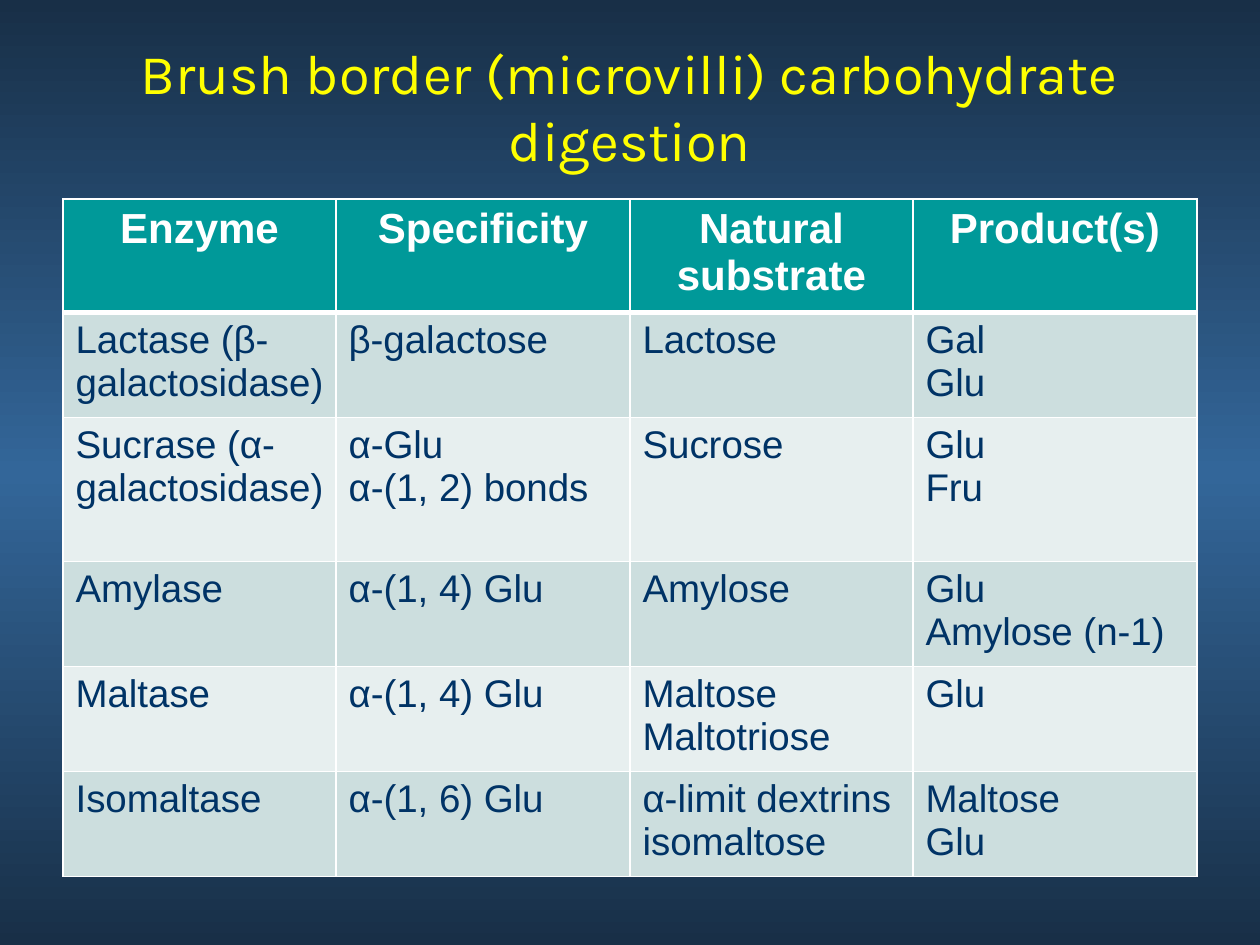
from copy import deepcopy
from dataclasses import dataclass

from lxml.etree import SubElement
from pptx import Presentation
from pptx.dml.color import RGBColor as Rgb
from pptx.enum.text import MSO_ANCHOR as Anchor, PP_ALIGN as Align
from pptx.oxml.ns import qn
from pptx.util import Pt

PX = 914400 / 126


@dataclass(frozen=True)
class Theme:
    edge: str = "182F47"
    glow: str = "336699"
    title: str = "FFFF00"
    header: str = "009999"
    bands: tuple = ("CCDEDE", "E7EFEF")
    ink: str = "003366"
    white: str = "FFFFFF"
    title_font: str = "Karla"
    body_font: str = "Arial"
    title_size: int = 32
    header_size: int = 24
    body_size: int = 22


HEADINGS = ["Enzyme", "Specificity", "Natural substrate", "Product(s)"]
ENZYMES = [
    ["Lactase (β-galactosidase)", "β-galactose", "Lactose", "Gal\nGlu"],
    ["Sucrase (α-galactosidase)", "α-Glu\nα-(1, 2) bonds", "Sucrose", "Glu\nFru"],
    ["Amylase", "α-(1, 4) Glu", "Amylose", "Glu\nAmylose (n-1)"],
    ["Maltase", "α-(1, 4) Glu", "Maltose\nMaltotriose", "Glu"],
    ["Isomaltase", "α-(1, 6) Glu", "α-limit dextrins\nisomaltose", "Maltose\nGlu"],
]
COLUMN_WIDTHS = [273, 294, 283, 284]
ROW_HEIGHTS = [106, 99, 144, 99, 99, 99]


def emu(px):
    return round(px * PX)


class SlideBuilder:
    def __init__(self, slide, theme):
        self.slide = slide
        self.theme = theme

    def background(self):
        """Vertical gradient, light in the middle and dark at both ends."""
        fill = self.slide.background.fill
        fill.gradient()
        fill.gradient_angle = 90
        stop_list = self.slide.element.find(".//" + qn("a:gsLst"))
        stop_list.append(deepcopy(stop_list[-1]))
        colors = (self.theme.edge, self.theme.glow, self.theme.edge)
        for stop, position, color in zip(fill.gradient_stops, (0, 0.5, 1), colors):
            stop.position = position
            stop.color.rgb = Rgb.from_string(color)

    def styled_text(self, frame, text, color, align, **font_values):
        frame.text = text
        frame.word_wrap = True
        for paragraph in frame.paragraphs:
            paragraph.alignment = align
            for run in paragraph.runs:
                run.font.color.rgb = Rgb.from_string(color)
                for name, value in font_values.items():
                    setattr(run.font, name, value)

    def title(self, text, left, top, width, height):
        box = self.slide.shapes.add_textbox(*map(emu, (left, top, width, height)))
        box.text_frame.vertical_anchor = Anchor.MIDDLE
        self.styled_text(box.text_frame, text, self.theme.title, Align.CENTER,
                         name=self.theme.title_font, size=Pt(self.theme.title_size))

    def borders(self, cell, widths):
        properties = cell._tc.get_or_add_tcPr()
        for index, (side, points) in enumerate(widths.items()):
            line = SubElement(properties, qn("a:ln" + side), w=str(Pt(points)))
            fill = SubElement(line, qn("a:solidFill"))
            SubElement(fill, qn("a:srgbClr"), val=self.theme.white)
            properties.insert(index, line)

    def table(self, rows, left, top, widths, heights):
        theme = self.theme
        size = sum(widths), sum(heights)
        grid = self.slide.shapes.add_table(
            len(rows), len(widths), *map(emu, (left, top, *size))).table
        for column, width in zip(grid.columns, widths):
            column.width = emu(width)
        for r, (texts, height) in enumerate(zip(rows, heights)):
            grid.rows[r].height = emu(height)
            header = r == 0
            color = theme.white if header else theme.ink
            align = Align.CENTER if header else Align.LEFT
            points = theme.header_size if header else theme.body_size
            band = theme.header if header else theme.bands[(r - 1) % 2]
            for c, text in enumerate(texts):
                cell = grid.cell(r, c)
                cell.fill.solid()
                cell.fill.fore_color.rgb = Rgb.from_string(band)
                self.styled_text(cell.text_frame, text, color, align,
                                 name=theme.body_font, size=Pt(points), bold=header)
                self.borders(cell, {"L": 1, "R": 1, "T": 3 if r == 1 else 1,
                                    "B": 3 if header else 1})


def main():
    deck = Presentation()
    deck.slide_width, deck.slide_height = emu(1260), emu(945)
    builder = SlideBuilder(deck.slides.add_slide(deck.slide_layouts[6]), Theme())
    builder.background()
    builder.title("Brush border (microvilli) carbohydrate digestion", 63, 53, 1134, 105)
    builder.table([HEADINGS, *ENZYMES], 63, 199, COLUMN_WIDTHS, ROW_HEIGHTS)
    deck.save("out.pptx")


if __name__ == "__main__":
    main()
